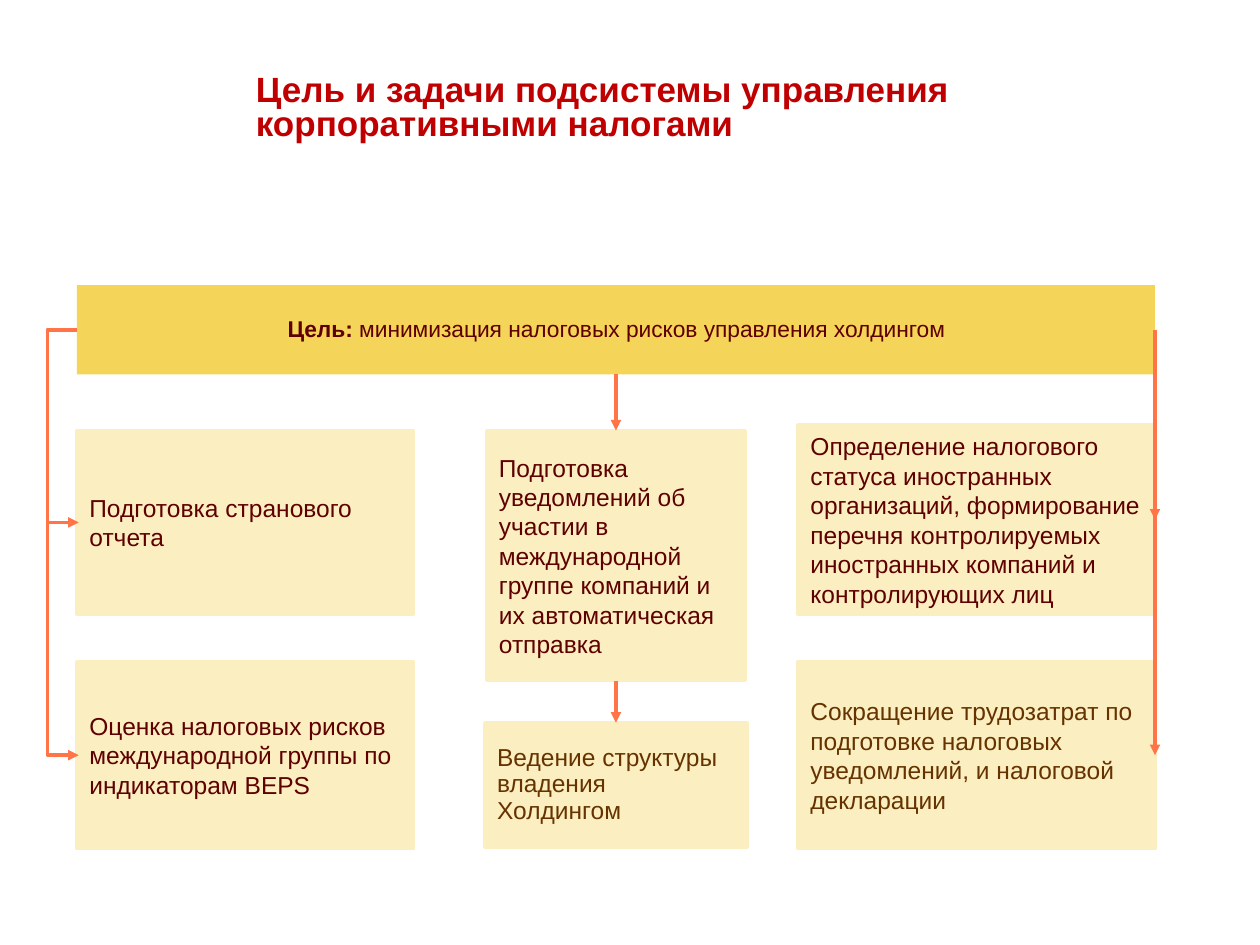
import pptx
import pptx.util
import pptx.dml.color
import pptx.enum.shapes
import pptx.enum.text
import lxml.etree

Pt = pptx.util.Pt
RGBColor = pptx.dml.color.RGBColor
Align = pptx.enum.text.PP_ALIGN
Connector = pptx.enum.shapes.MSO_CONNECTOR

theme = {
    "font": "Arial",
    "title": RGBColor.from_string("C00000"),
    "dark": RGBColor.from_string("5F0000"),
    "brown": RGBColor.from_string("663300"),
    "goal": RGBColor.from_string("F4D459"),
    "task": RGBColor.from_string("FBEFC1"),
    "arrow": RGBColor.from_string("FF7547"),
    "title_size": Pt(20),
    "goal_size": Pt(13),
    "task_size": Pt(14),
    "line_width": Pt(2),
}


def write_text(shape, runs, color, size, spacing, align=Align.LEFT):
    """Fill the shape with one paragraph of (text, bold) runs."""
    frame = shape.text_frame
    frame.word_wrap = True
    frame.auto_size = pptx.enum.text.MSO_AUTO_SIZE.NONE
    frame.vertical_anchor = pptx.enum.text.MSO_ANCHOR.MIDDLE
    paragraph = frame.paragraphs[0]
    paragraph.alignment = align
    paragraph.line_spacing = spacing
    for text, bold in runs:
        run = paragraph.add_run()
        run.text = text
        font_format = {"name": theme["font"], "size": size, "bold": bold}
        for name, value in font_format.items():
            setattr(run.font, name, value)
        run.font.color.rgb = color


def style_arrow(connector):
    connector.line.color.rgb = theme["arrow"]
    connector.line.width = theme["line_width"]
    line = connector.line._get_or_add_ln()
    namespace = "{%s}" % line.nsmap["a"]
    lxml.etree.SubElement(line, namespace + "tailEnd", type="triangle")
    lxml.etree.SubElement(connector._element.spPr, namespace + "effectLst")


presentation = pptx.Presentation()
presentation.slide_width = Pt(720)
presentation.slide_height = Pt(540)
slide = presentation.slides.add_slide(presentation.slide_layouts[5])
shapes = slide.shapes

title = shapes.title
for name, value in {"left": 139, "top": 20, "width": 516, "height": 85}.items():
    setattr(title, name, Pt(value))
write_text(title, [("Цель и задачи подсистемы управления корпоративными налогами", True)],
           theme["title"], theme["title_size"], 0.8)

# Goal bar
rectangle = pptx.enum.shapes.MSO_SHAPE.RECTANGLE
goal_left, goal_top, goal_width, goal_height = 44, 163, 616, 51
goal = shapes.add_shape(rectangle, Pt(goal_left), Pt(goal_top), Pt(goal_width), Pt(goal_height))
goal.shadow.inherit = False
goal.fill.solid()
goal.fill.fore_color.rgb = theme["goal"]
goal.line.fill.background()
write_text(goal, [("Цель: ", True), ("минимизация налоговых рисков управления холдингом", False)],
           theme["dark"], theme["goal_size"], 0.9, Align.CENTER)

# Task boxes: left, top, width, height, colour, line spacing, text
tasks = {
    "report": (44, 246, 192, 105, "dark", 1.0, "Подготовка странового отчета"),
    "risks": (44, 378, 192, 107, "dark", 1.0,
              "Оценка налоговых рисков международной группы по индикаторам BEPS"),
    "notices": (278, 246, 148, 143, "dark", 1.0,
                "Подготовка уведомлений об участии в международной группе компаний "
                "и их автоматическая отправка"),
    "ownership": (277, 413, 150, 71, "brown", 0.9, "Ведение структуры владения Холдингом"),
    "status": (456, 243, 204, 108, "dark", 1.0,
               "Определение налогового статуса иностранных организаций, формирование перечня "
               "контролируемых иностранных компаний и контролирующих лиц"),
    "savings": (456, 378, 204, 107, "brown", 1.0,
                "Сокращение трудозатрат по подготовке налоговых уведомлений, "
                "и налоговой декларации"),
}
boxes = {"goal": goal}
for key, (left, top, width, height, color, spacing, text) in tasks.items():
    box = shapes.add_shape(rectangle, Pt(left), Pt(top), Pt(width), Pt(height))
    box.shadow.inherit = False
    box.fill.solid()
    box.fill.fore_color.rgb = theme["task"]
    box.line.color.rgb = theme["task"]
    box.line.width = theme["line_width"]
    write_text(box, [(text, False)], theme[color], theme["task_size"], spacing)
    boxes[key] = box

# Elbows run around the left side, 17 pt outside the boxes
elbow_width, elbow_reach = 1, 17
for key in ("report", "risks"):
    box = boxes[key]
    elbow = shapes.add_connector(
        Connector.ELBOW, goal.left, goal.top + goal.height // 2,
        box.left + Pt(elbow_width), box.top + box.height // 2)
    geometry = elbow._element.spPr.prstGeom
    geometry.get_or_add_avLst()
    geometry.rewrite_guides([("adj1", -100000 * elbow_reach // elbow_width)])
    style_arrow(elbow)

# Straight arrows: from, side, to, side
links = [
    ("goal", 3, "status", 3),
    ("goal", 3, "savings", 3),
    ("goal", 2, "notices", 0),
    ("notices", 2, "ownership", 0),
]
for start, start_side, end, end_side in links:
    arrow = shapes.add_connector(Connector.STRAIGHT, 0, 0, 0, 0)
    arrow.begin_connect(boxes[start], start_side)
    arrow.end_connect(boxes[end], end_side)
    style_arrow(arrow)

presentation.save("out.pptx")
